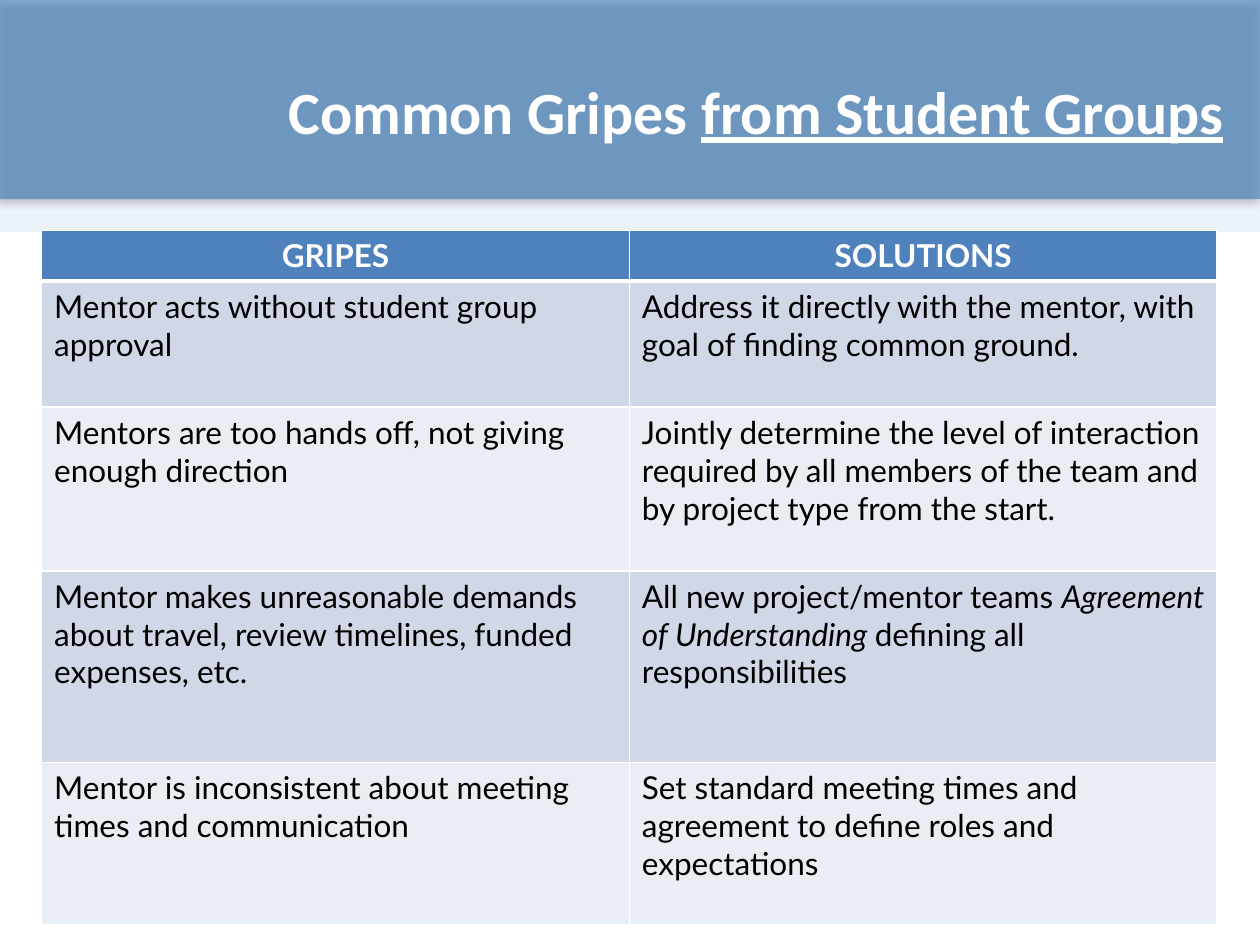
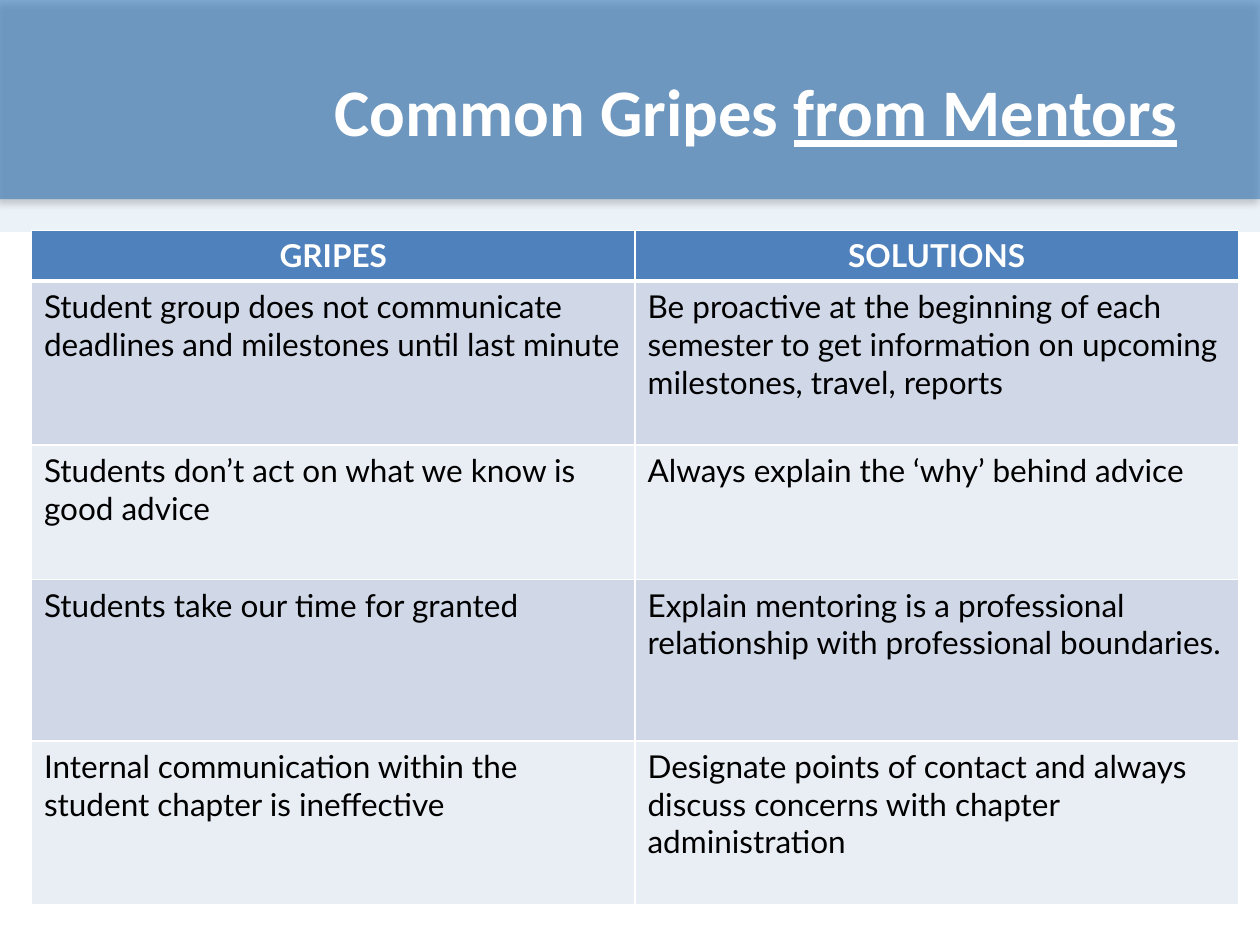
from dataclasses import dataclass

from lxml import etree
from pptx import Presentation
from pptx import util as u
from pptx.dml.color import RGBColor
from pptx.enum import shapes, text
from pptx.oxml import ns

Inches, Pt = u.Inches, u.Pt


@dataclass(frozen=True)
class Theme:
    white: str = "FFFFFF"
    ink: str = "000000"
    band: str = "095AA6"
    veil: str = "B5CDE4"
    header: str = "4F81BD"
    stripes: tuple = ("D0D8E8", "E9EDF4")
    title_font: str = "Calibri"
    table_font: str = "Lato"
    table_size: float = 18
    rule: float = 1
    header_rule: float = 3


def add_xml(parent, tag, **attributes):
    return etree.SubElement(parent, ns.qn(tag), attributes)


class Designer:
    """Draws the elements of the current slide in one style."""

    def __init__(self, deck, theme):
        self.deck, self.theme, self.page = deck, theme, None

    def new_page(self):
        self.page = self.deck.slides.add_slide(self.deck.slide_layouts[6])
        band = self.rectangle(0, 10.01, 1.58, self.theme.band, 59)
        self.drop_shadow(band)
        self.rectangle(-0.09, 10.09, 1.84, self.theme.veil, 26)

    def rectangle(self, left, width, height, color, opacity):
        shape = self.page.shapes.add_shape(
            shapes.MSO_SHAPE.RECTANGLE, Inches(left), 0, Inches(width), Inches(height))
        shape.shadow.inherit = False
        shape.fill.solid()
        shape.fill.fore_color.rgb = RGBColor.from_string(color)
        shape.line.fill.background()
        fill_color = shape._element.spPr.find(".//" + ns.qn("a:srgbClr"))
        add_xml(fill_color, "a:alpha", val=str(opacity * 1000))
        return shape

    def drop_shadow(self, shape):
        effects = shape._element.spPr.find(ns.qn("a:effectLst"))
        shadow = add_xml(effects, "a:outerShdw", blurRad=str(Pt(4)), dist=str(Pt(3)),
                         dir=str(135 * 60000), algn="tr", rotWithShape="0")
        color = add_xml(shadow, "a:srgbClr", val=self.theme.ink)
        add_xml(color, "a:alpha", val="40000")

    def set_font(self, para, name, size, color, bold):
        font = para.font
        font.name, font.size, font.bold = name, Pt(size), bold
        font.color.rgb = RGBColor.from_string(color)

    def title(self, lead, underlined, size):
        box = self.page.shapes.add_textbox(Inches(2), Inches(0.25), Inches(8), Inches(1.25))
        frame = box.text_frame
        frame.word_wrap = True
        frame.vertical_anchor = text.MSO_ANCHOR.MIDDLE
        para = frame.paragraphs[0]
        para.alignment = text.PP_ALIGN.CENTER
        para.add_run().text = lead
        span = para.add_run()
        span.text = underlined
        span.font.underline = True
        self.set_font(para, self.theme.title_font, size, self.theme.white, True)

    def borders(self, cell, top, bottom):
        properties = cell._tc.get_or_add_tcPr()
        widths = {"L": self.theme.rule, "R": self.theme.rule, "T": top, "B": bottom}
        for index, (side, width) in enumerate(widths.items()):
            line = add_xml(properties, "a:ln" + side, w=str(Pt(width)))
            add_xml(add_xml(line, "a:solidFill"), "a:srgbClr", val=self.theme.white)
            properties.insert(index, line)

    def cell(self, cell, content, row):
        """Content is a string, or a list of (words, italic) spans."""
        theme, is_header = self.theme, row == 0
        cell.fill.solid()
        fill = theme.header if is_header else theme.stripes[(row - 1) % 2]
        cell.fill.fore_color.rgb = RGBColor.from_string(fill)
        self.borders(cell, top=theme.header_rule if row == 1 else theme.rule,
                     bottom=theme.header_rule if is_header else theme.rule)
        para = cell.text_frame.paragraphs[0]
        spans = [(content, False)] if isinstance(content, str) else content
        for words, italic in spans:
            span = para.add_run()
            span.text = words
            if italic:
                span.font.italic = True
        if is_header:
            para.alignment = text.PP_ALIGN.CENTER
        self.set_font(para, theme.table_font, theme.table_size,
                      theme.white if is_header else theme.ink, is_header)

    def table(self, left, width, heights, pairs):
        rows = [("GRIPES", "SOLUTIONS"), *pairs]
        grid = self.page.shapes.add_table(
            len(rows), 2, Inches(left), Inches(1.83),
            Inches(width), Inches(sum(heights))).table
        for column in grid.columns:
            column.width = Inches(width / 2)
        for row, (height, contents) in enumerate(zip(heights, rows)):
            grid.rows[row].height = Inches(height)
            for column, content in enumerate(contents):
                self.cell(grid.cell(row, column), content, row)


STUDENT_GRIPES = [
    ("Mentor acts without student group approval",
     "Address it directly with the mentor, with goal of finding common ground."),
    ("Mentors are too hands off, not giving enough direction",
     "Jointly determine the level of interaction required by all members of the team "
     "and by project type from the start."),
    ("Mentor makes unreasonable demands about travel, review timelines, "
     "funded expenses, etc.",
     [("All new project/mentor teams ", False), ("Agreement of Understanding ", True),
      ("defining all responsibilities", False)]),
    ("Mentor is inconsistent about meeting times and communication",
     "Set standard meeting times and agreement to define roles and expectations"),
]

MENTOR_GRIPES = [
    ("Student group does not communicate deadlines and milestones until last minute",
     "Be proactive at the beginning of each semester to get information on upcoming "
     "milestones, travel, reports"),
    ("Students don’t act on what we know is good advice",
     "Always explain the ‘why’ behind advice"),
    ("Students take our time for granted",
     "Explain mentoring is a professional relationship with professional boundaries."),
    ("Internal communication within the student chapter is ineffective",
     "Designate points of contact and always discuss concerns with chapter administration"),
]


def main():
    deck = Presentation()
    deck.slide_width, deck.slide_height = Inches(10), Inches(7.5)
    designer = Designer(deck, Theme())

    # Gripes from student groups
    designer.new_page()
    designer.title("Common Gripes ", "from Student Groups", 34.2)
    designer.table(0.33, 9.33, [0.4, 1, 1.3, 1.52, 1.29], STUDENT_GRIPES)

    # Gripes from mentors
    designer.new_page()
    designer.title("Common Gripes ", "from Mentors", 38)
    designer.table(0.25, 9.58, [0.4, 1.3, 1.07, 1.28, 1.3], MENTOR_GRIPES)

    deck.save("out.pptx")


if __name__ == "__main__":
    main()
